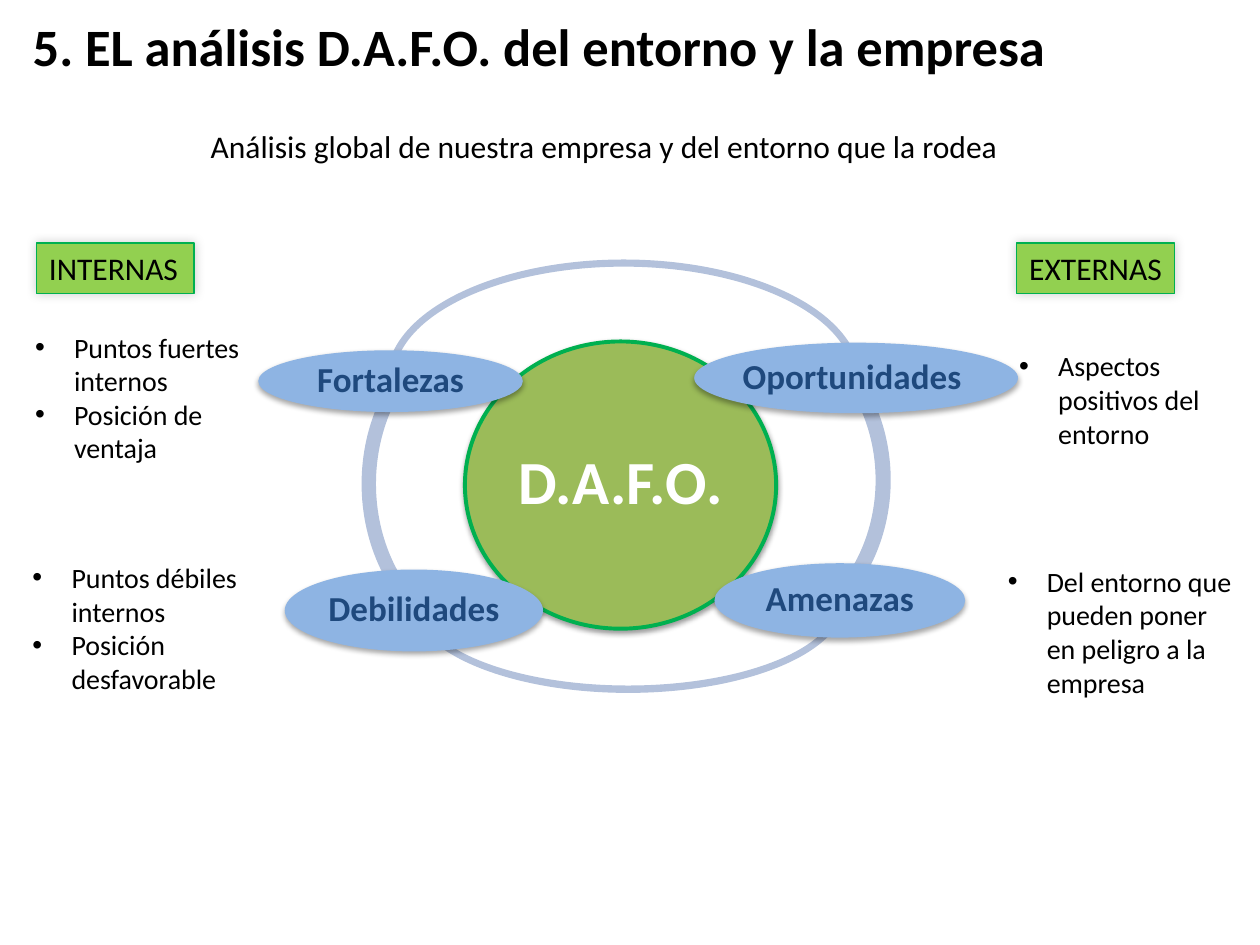
from pptx import Presentation
from pptx.dml.color import RGBColor
from pptx.enum.shapes import MSO_SHAPE
from pptx.enum.text import MSO_ANCHOR, MSO_AUTO_SIZE, PP_ALIGN
from pptx.oxml import parse_xml
from pptx.oxml.ns import nsdecls, qn
from pptx.util import Inches, Pt

LEFT, CENTER = PP_ALIGN.LEFT, PP_ALIGN.CENTER
TOP, MIDDLE = MSO_ANCHOR.TOP, MSO_ANCHOR.MIDDLE
GROW, FIXED = MSO_AUTO_SIZE.SHAPE_TO_FIT_TEXT, MSO_AUTO_SIZE.NONE
ARC, OVAL, RECT = MSO_SHAPE.BLOCK_ARC, MSO_SHAPE.OVAL, MSO_SHAPE.RECTANGLE

COLORS = {
    "text": "000000", "white": "FFFFFF", "navy": "1F497D", "arc": "B3C1DB",
    "core": "9BBB59", "petal": "8EB4E3", "label": "92D050", "border": "00B050",
}
# Shadows: opacity %, blur pt, distance pt, direction in degrees
CORE_SHADOW = (38, 3.1, 1.6, 90)
PETAL_SHADOW = (35, 3.1, 1.8, 90)
LABEL_SHADOW = (20, 6, 0, 225)


class SlideBuilder:
    font = "Calibri"
    indent = Inches(0.31)

    def __init__(self, slide):
        self.slide = slide

    def rgb(self, name):
        return RGBColor.from_string(COLORS[name])

    def frame(self, tf, **values):
        for name, value in values.items():
            setattr(tf, name, value)

    def add_text(self, p, text, size, color="text", bold=False, align=LEFT):
        r = p.add_run()
        r.text = text
        p.alignment = align
        style = {"name": self.font, "size": Pt(size), "bold": bold}
        for name, value in style.items():
            setattr(r.font, name, value)
        r.font.color.rgb = self.rgb(color)

    def title(self, text, box):
        sp = self.slide.shapes.title
        sp.left, sp.top, sp.width, sp.height = map(Inches, box)
        self.frame(sp.text_frame, vertical_anchor=MIDDLE, auto_size=FIXED)
        self.add_text(sp.text_frame.paragraphs[0], text, 30, bold=True)

    def shape(self, kind, box, fill, line=None, width=0, shadow=None):
        sp = self.slide.shapes.add_shape(kind, *map(Inches, box))
        sp.fill.solid()
        sp.fill.fore_color.rgb = self.rgb(fill)
        if line:
            sp.line.color.rgb = self.rgb(line)
            sp.line.width = Pt(width)
        else:
            sp.line.fill.background()
        sp.shadow.inherit = False
        if shadow:
            self.add_shadow(sp, *shadow)
        return sp

    def add_shadow(self, sp, opacity, blur, distance, angle):
        effects = sp._element.spPr.find(qn("a:effectLst"))
        effects.append(parse_xml(
            f'<a:outerShdw {nsdecls("a")} blurRad="{Pt(blur)}" dist="{Pt(distance)}" '
            f'dir="{angle * 60000}" rotWithShape="0"><a:srgbClr val="000000">'
            f'<a:alpha val="{opacity * 1000}"/></a:srgbClr></a:outerShdw>'))

    def arc(self, box, adjustments):
        sp = self.shape(ARC, box, "arc")
        for i, value in enumerate(adjustments):
            sp.adjustments[i] = value

    def oval(self, text, box, size, color, inset, **look):
        sp = self.shape(OVAL, box, **look)
        tf = sp.text_frame
        margins = {f"margin_{side}": Inches(inset)
                   for side in ("left", "top", "right", "bottom")}
        self.frame(tf, word_wrap=False, vertical_anchor=MIDDLE, **margins)
        p = tf.paragraphs[0]
        p.line_spacing = 0.9
        self.add_text(p, text, size, color, True, CENTER)

    def label(self, text, box):
        sp = self.shape(RECT, box, "label", "border", 0.75, LABEL_SHADOW)
        self.frame(sp.text_frame, word_wrap=False, vertical_anchor=TOP, auto_size=GROW)
        self.add_text(sp.text_frame.paragraphs[0], text, 18)

    def text(self, lines, box, size, bullets=False, align=LEFT):
        tf = self.slide.shapes.add_textbox(*map(Inches, box)).text_frame
        self.frame(tf, word_wrap=True, auto_size=GROW)
        for i, line in enumerate(lines):
            p = tf.add_paragraph() if i else tf.paragraphs[0]
            if bullets:
                self.add_bullet(p)
            self.add_text(p, line, size, align=align)

    def add_bullet(self, p):
        pPr = p._p.get_or_add_pPr()
        pPr.set("marL", str(self.indent))
        pPr.set("indent", str(-self.indent))
        pPr.append(parse_xml(f'<a:buFont {nsdecls("a")} typeface="Arial"/>'))
        pPr.append(parse_xml(f'<a:buChar {nsdecls("a")} char="•"/>'))


def main():
    prs = Presentation()
    prs.slide_width, prs.slide_height = Inches(10), Inches(7.5)
    s = SlideBuilder(prs.slides.add_slide(prs.slide_layouts[5]))

    # Title
    s.title("5. EL análisis D.A.F.O. del entorno y la empresa", (0.16, 0.05, 9.37, 0.63))

    # Ring of arcs: box, then start angle, end angle and thickness
    for box, adjustments in (
        ((2.87, 2.48, 2.28, 2.72), (78.37, 130.61, 0.05)),
        ((3.26, 4.03, 3.45, 1.47), (215.18, 107.18, 0.04)),
        ((4.66, 2.45, 2.41, 2.72), (193.44, 27.39, 0.05)),
        ((3.07, 2.06, 3.76, 1.9), (107.81, 215.81, 0.03)),
    ):
        s.arc(box, adjustments)

    # Core and the four factors
    s.oval("D.A.F.O.", (3.69, 2.71, 2.47, 2.28), 35, "white", 0.05,
           fill="core", line="border", width=2.25, shadow=CORE_SHADOW)
    for text, box in (
        ("Fortalezas", (2.05, 2.78, 2.1, 0.49)),
        ("Oportunidades ", (5.51, 2.72, 2.57, 0.56)),
        ("Amenazas", (5.67, 4.47, 1.99, 0.59)),
        ("Debilidades", (2.26, 4.52, 2.05, 0.65)),
    ):
        s.oval(text, box, 20, "navy", 0.03, fill="petal", shadow=PETAL_SHADOW)

    # Column labels
    for text, left in (("INTERNAS", 0.29), ("EXTERNAS", 8.07)):
        s.label(text, (left, 1.93, 1.25, 0.4))

    # Explanations beside each factor
    for lines, left, top, height in (
        (("Puntos fuertes internos", "Posición de ventaja"), 0.18, 2.57, 1.18),
        (("Puntos débiles internos", "Posición desfavorable"), 0.16, 4.4, 1.18),
        (("Aspectos positivos del entorno",), 7.99, 2.72, 0.91),
        (("Del entorno que pueden poner en peligro a la empresa",), 7.9, 4.43, 1.18),
    ):
        s.text(lines, (left, top, 2, height), 16, bullets=True)

    # Subtitle
    s.text(("Análisis global de nuestra empresa y del entorno que la rodea",),
           (0.45, 0.96, 8.69, 0.4), 18, align=CENTER)

    prs.save("out.pptx")


if __name__ == "__main__":
    main()
